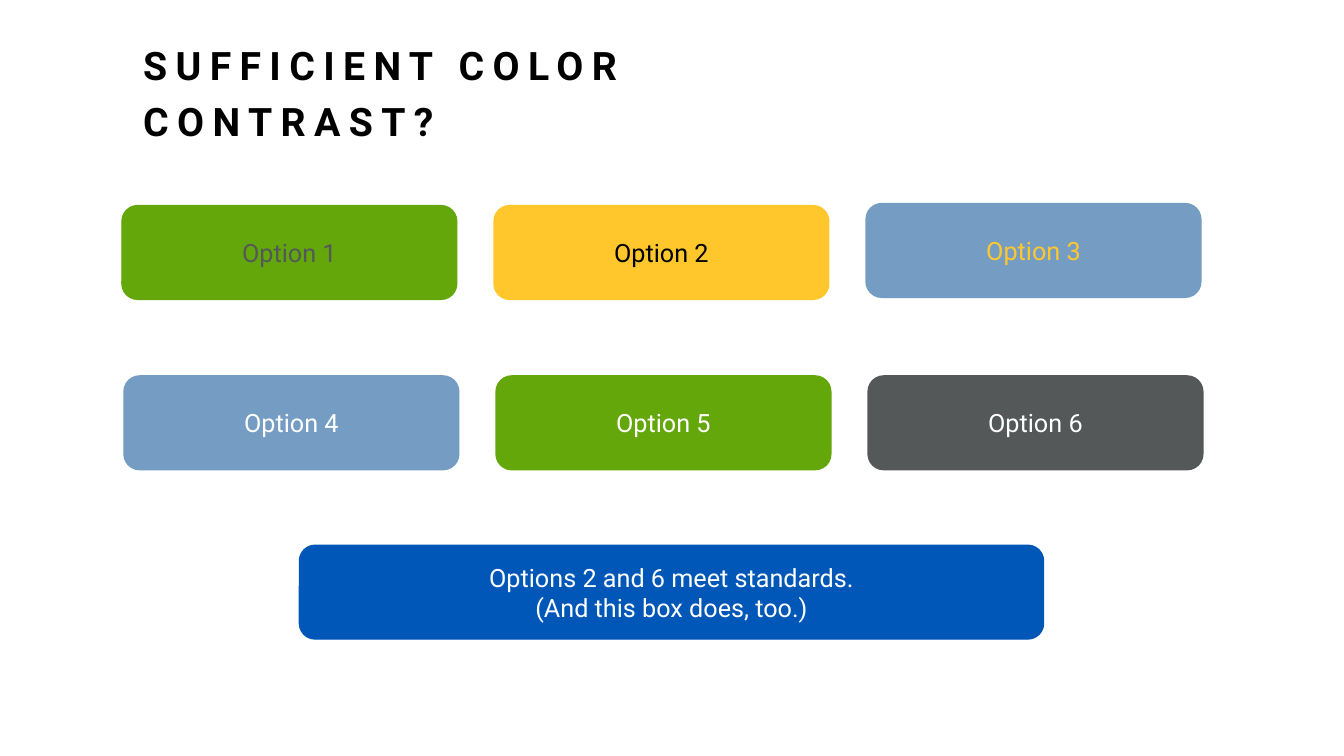
from dataclasses import dataclass

from pptx import Presentation
from pptx import util as u
from pptx.dml.color import RGBColor
from pptx.enum import shapes, text


@dataclass(frozen=True)
class Theme:
    font: str = "Roboto"
    title_size: int = 28
    title_spacing: int = 6
    label_size: int = 18
    black: str = "000000"
    white: str = "FFFFFF"
    green: str = "64A70B"
    yellow: str = "FFC72C"
    sky: str = "759DC4"
    slate: str = "545859"
    blue: str = "0057B7"


class Composer:
    PX = u.Inches(1) // 100

    def __init__(self, deck, theme):
        self.theme = theme
        self.page = deck.slides.add_slide(deck.slide_layouts[5])

    def px(self, *lengths):
        return [u.Emu(length * self.PX) for length in lengths]

    def style(self, para, size, color, align, bold=False):
        para.alignment = align
        para.font.name = self.theme.font
        para.font.size = u.Pt(size)
        para.font.bold = bold
        para.font.color.rgb = RGBColor.from_string(color)

    def title(self, words, left, top, width, height):
        box = self.page.shapes.title
        box.left, box.top, box.width, box.height = self.px(left, top, width, height)
        frame = box.text_frame
        frame.text = words
        frame.word_wrap = True
        frame.auto_size = text.MSO_AUTO_SIZE.NONE
        frame.vertical_anchor = text.MSO_ANCHOR.MIDDLE
        para = frame.paragraphs[0]
        para.line_spacing = 1.2
        self.style(para, self.theme.title_size, self.theme.black, text.PP_ALIGN.LEFT, True)
        for span in para.runs:
            span.font._element.set("spc", str(self.theme.title_spacing * 100))

    def button(self, words, left, top, width, height, fill, color):
        box = self.page.shapes.add_shape(
            shapes.MSO_SHAPE.ROUNDED_RECTANGLE, *self.px(left, top, width, height))
        box.shadow.inherit = False
        box.fill.solid()
        box.fill.fore_color.rgb = RGBColor.from_string(fill)
        box.line.color.rgb = RGBColor.from_string(fill)
        box.line.width = u.Pt(1)
        frame = box.text_frame
        frame.text = words
        frame.vertical_anchor = text.MSO_ANCHOR.MIDDLE
        for para in frame.paragraphs:
            self.style(para, self.theme.label_size, color, text.PP_ALIGN.CENTER)


def main():
    deck = Presentation()
    deck.slide_width, deck.slide_height = u.Inches(13.33), u.Inches(7.5)
    theme = Theme()
    composer = Composer(deck, theme)
    composer.title("SUFFICIENT COLOR CONTRAST?", 132, 34, 728, 107)

    option_width, button_height, column_step = 332, 93, 369
    option_rows = [
        (121, [(204, theme.green, theme.slate),
               (204, theme.yellow, theme.black),
               (202, theme.sky, theme.yellow)]),
        (123, [(373, theme.sky, theme.white),
               (373, theme.green, theme.white),
               (373, theme.slate, theme.white)]),
    ]
    number = 1
    for left, options in option_rows:
        for column, (top, fill, color) in enumerate(options):
            composer.button(f"Option {number}", left + column * column_step, top,
                            option_width, button_height, fill, color)
            number += 1

    composer.button("Options 2 and 6 meet standards.\n(And this box does, too.)",
                    297, 541, 738, button_height, theme.blue, theme.white)
    deck.save("out.pptx")


if __name__ == "__main__":
    main()
